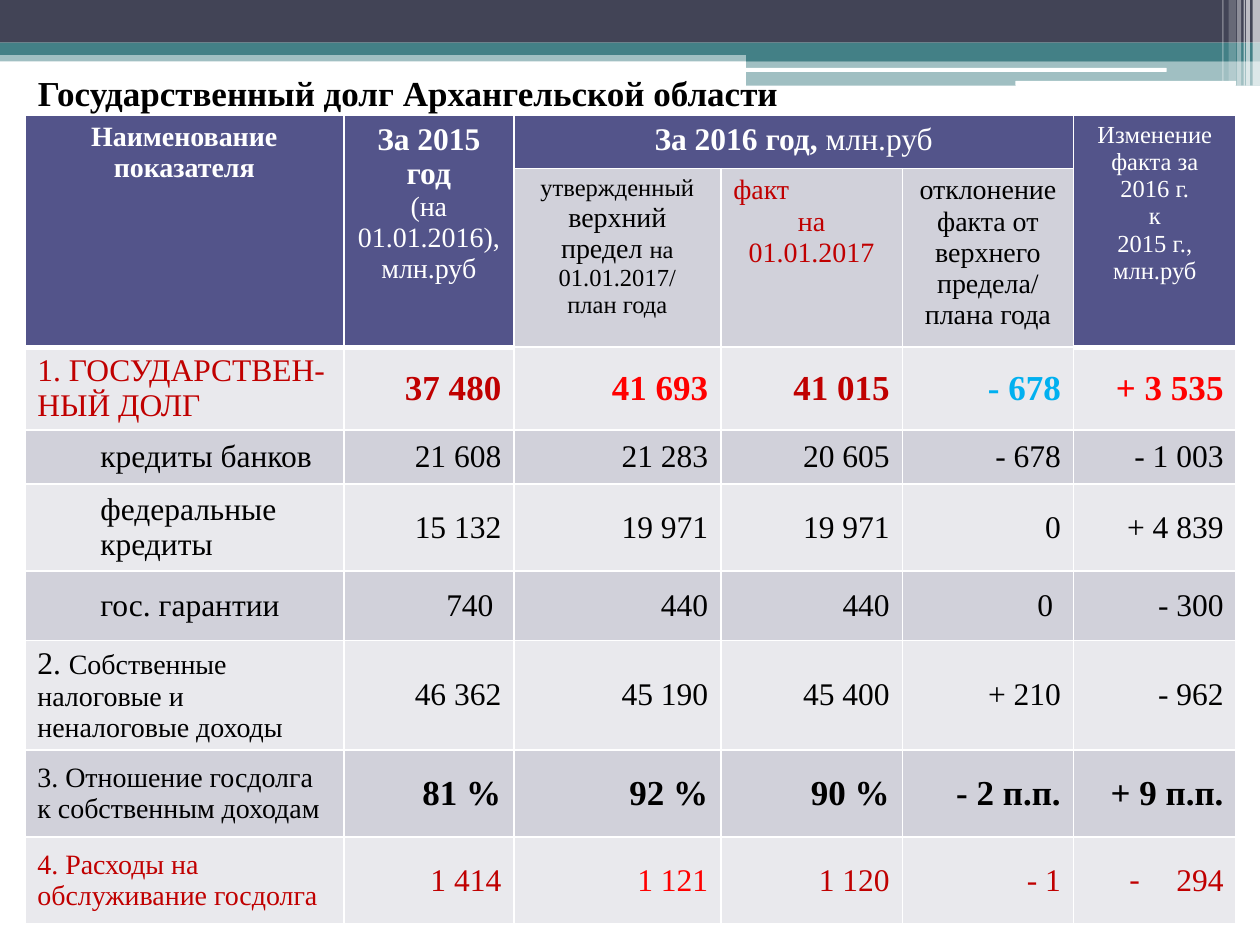
from lxml.etree import SubElement
from pptx import Presentation
from pptx.dml.color import RGBColor
from pptx.enum.shapes import MSO_SHAPE
from pptx.enum.text import MSO_ANCHOR, MSO_AUTO_SIZE, PP_ALIGN
from pptx.oxml import parse_xml
from pptx.oxml.ns import nsdecls, qn
from pptx.util import Cm, Pt

COLORS = {"white": "FFFFFF", "black": "000000", "slate": "424456", "teal": "438086",
          "indigo": "53548A", "light": "E9E9ED", "grey": "D1D1DA",
          "dark_red": "C00000", "red": "FF0000", "blue": "00B0F0"}

BANDS = [(0, 1.02, 25.4, 0.22, "teal", 50), (0, 0, 25.4, 0.86, "slate", 100),
         (0, 0.86, 25.4, 0.25, "teal", 100), (15.04, 0.99, 10.36, 0.25, "teal", 100),
         (15.04, 1.22, 10.36, 0.51, "teal", 50)]
HIGHLIGHTS = [(15.01, 1.37, 8.51, 0.08), (20.47, 1.63, 4.45, 0.1)]
STRIPES = [(25.25, 0.15, 1.73, 65), (25.12, 0.08, 1.73, 65), (25.07, 0.03, 1.73, 60),
           (24.94, 0.08, 1.73, 40), (24.77, 0.15, 1.63, 20), (24.64, 0.03, 1.63, 30)]

WIDTHS = [6.43, 3.43, 4.17, 3.66, 3.45, 3.28]
HEIGHTS = [1.07, 3.6, 1.67, 1.09, 1.75, 1.4, 2.21, 1.75, 1.75]

CENTER, LEFT, RIGHT = PP_ALIGN.CENTER, PP_ALIGN.LEFT, PP_ALIGN.RIGHT
HEADERS = {
    (0, 0): [[("Наименование показателя", 16, "white", True)]],
    (0, 1): [[("За 2015 год", 18, "white", True)],
             [("(на 01.01.2016), млн.руб", 16, "white", False)]],
    (0, 2): [[("За 2016 год, ", 18, "white", True), ("млн.руб", 18, "white", False)]],
    (0, 5): [[(line, 14, "white", False)]
             for line in ("Изменение факта за 2016 г.", "к", "2015 г.,", "млн.руб")],
    (1, 2): [[("утвержденный ", 14, "black", False),
              ("верхний предел ", 16, "black", False),
              ("на 01.01.2017/", 14, "black", False)],
             [("план года", 14, "black", False)]],
    (1, 3): [[("факт", 16, "dark_red", False)], [("на 01.01.2017", 16, "dark_red", False)]],
    (1, 4): [[("отклонение факта от верхнего предела/ плана года", 16, "black", False)]],
}
MERGES = [((0, 0), (1, 0)), ((0, 1), (1, 1)), ((0, 2), (0, 4)), ((0, 5), (1, 5))]

BLACK = ["black"] * 5
INDICATORS = [
    ([("1. ГОСУДАРСТВЕН-НЫЙ ДОЛГ", 18, "dark_red", False)], 0,
     ["37 480", "41 693", "41 015", "- 678", "+ 3 535"], 20, True,
     ["dark_red", "red", "dark_red", "blue", "red"]),
    ([("кредиты банков", 18, "black", False)], 1,
     ["21 608", "21 283", "20 605", "- 678", "- 1 003"], 18, False, BLACK),
    ([("федеральные кредиты", 18, "black", False)], 1,
     ["15 132", "19 971", "19 971", "0", "+ 4 839"], 18, False, BLACK),
    ([("гос. гарантии", 18, "black", False)], 1,
     ["740 ", "440", "440", "0 ", "- 300"], 18, False, BLACK),
    ([("2. ", 18, "black", False),
      ("Собственные налоговые и неналоговые доходы", 16, "black", False)], 0,
     ["46 362", "45 190", "45 400", "+ 210", "- 962"], 18, False, BLACK),
    ([("3. Отношение госдолга к собственным доходам", 16, "black", False)], 0,
     ["81 %", "92 %", "90 %", "- 2 п.п.", "+ 9 п.п."], 20, True, BLACK),
    ([("4. Расходы на обслуживание госдолга", 16, "dark_red", False)], 0,
     ["1 414", "1 121", "1 120", "- 1", " 294"], 18, False,
     ["dark_red", "red", "dark_red", "dark_red", "dark_red"]),
]


class DebtSlide:
    """Holds the style and the slide, and draws each kind of element."""

    font = "Times New Roman"

    def __init__(self, slide):
        self.slide = slide

    def color(self, name):
        return RGBColor.from_string(COLORS[name])

    def style(self, run, size, color, bold):
        run.font.name, run.font.size, run.font.bold = self.font, Pt(size), bold
        run.font.color.rgb = self.color(color)

    def block(self, left, top, width, height, color, opacity=100, kind=MSO_SHAPE.RECTANGLE):
        block = self.slide.shapes.add_shape(kind, Cm(left), Cm(top), Cm(width), Cm(height))
        block.shadow.inherit = False
        block.fill.solid()
        block.fill.fore_color.rgb = self.color(color)
        block.line.fill.background()
        if opacity < 100:
            tint = block.fill._xPr.find(qn("a:solidFill"))[0]
            SubElement(tint, qn("a:alpha")).set("val", str(opacity * 1000))

    def title(self, text, left, top, width, height):
        heading = self.slide.shapes.title
        heading.left, heading.top = Cm(left), Cm(top)
        heading.width, heading.height = Cm(width), Cm(height)
        frame = heading.text_frame
        frame.text = text
        frame.auto_size = MSO_AUTO_SIZE.NONE
        frame.vertical_anchor = MSO_ANCHOR.MIDDLE
        frame.paragraphs[0].alignment = LEFT
        self.style(frame.paragraphs[0].runs[0], 20, "black", True)
        self.slide.shapes._spTree.append(heading._element)

    def table(self, left, top, widths, heights):
        frame = self.slide.shapes.add_table(len(heights), len(widths), Cm(left), Cm(top),
                                            Cm(sum(widths)), Cm(sum(heights)))
        for column, width in zip(frame.table.columns, widths):
            column.width = Cm(width)
        for row, height in zip(frame.table.rows, heights):
            row.height = Cm(height)
        return frame.table

    def cell(self, cell, fill, bottom=1):
        cell.fill.solid()
        cell.fill.fore_color.rgb = self.color(fill)
        properties = cell._tc.get_or_add_tcPr()
        for place, (side, width) in enumerate(zip("LRTB", (1, 1, 1, bottom))):
            properties.insert(place, parse_xml(
                f'<a:ln{side} {nsdecls("a")} w="{Pt(width)}"><a:solidFill>'
                f'<a:srgbClr val="{COLORS["white"]}"/></a:solidFill></a:ln{side}>'))

    def label(self, cell, paragraphs, align, anchor=MSO_ANCHOR.MIDDLE, level=0):
        cell.vertical_anchor = anchor
        frame = cell.text_frame
        frame.text = "\n".join("" for _ in paragraphs)
        for paragraph, pieces in zip(frame.paragraphs, paragraphs):
            paragraph.alignment = align
            if level:
                paragraph.level = level
                paragraph._p.get_or_add_pPr().set("marL", str(Cm(1.27)))
            for text, *look in pieces:
                run = paragraph.add_run()
                run.text = text
                self.style(run, *look)

    def dash(self, cell):
        properties = cell.text_frame.paragraphs[0]._p.get_or_add_pPr()
        properties.set("marL", str(Cm(0.79)))
        properties.set("indent", str(-Cm(0.79)))
        SubElement(properties, qn("a:buFont")).set("typeface", self.font)
        SubElement(properties, qn("a:buChar")).set("char", "-")


def main():
    presentation = Presentation()
    presentation.slide_width, presentation.slide_height = Cm(25.4), Cm(19.05)
    debt = DebtSlide(presentation.slides.add_slide(presentation.slide_layouts[5]))

    for band in BANDS:
        debt.block(*band)
    for highlight in HIGHLIGHTS:
        debt.block(*highlight, "white", kind=MSO_SHAPE.ROUNDED_RECTANGLE)
    for left, width, height, opacity in STRIPES:
        debt.block(left, 0, width, height, "white", opacity)
    debt.title("Государственный долг Архангельской области", 0.51, 1.32, 23.19, 1.07)

    table = debt.table(0.5, 2.33, WIDTHS, HEIGHTS)
    for row in range(len(HEIGHTS)):
        for column in range(len(WIDTHS)):
            subheader = row == 1 and 2 <= column <= 4
            banded = "light" if row % 2 == 0 else "grey"
            tall = row < 2 and column in (0, 1, 5)
            fill = "indigo" if row < 2 and not subheader else banded
            debt.cell(table.cell(row, column), fill, 3 if tall else 1)
    for first, last in MERGES:
        table.cell(*first).merge(table.cell(*last))

    for place, paragraphs in HEADERS.items():
        debt.label(table.cell(*place), paragraphs, CENTER, MSO_ANCHOR.TOP)
    table.cell(1, 3).text_frame.paragraphs[0].alignment = LEFT
    for row, (name, level, values, size, bold, colors) in enumerate(INDICATORS, 2):
        debt.label(table.cell(row, 0), [name], LEFT, level=level)
        for column, (value, color) in enumerate(zip(values, colors), 1):
            debt.label(table.cell(row, column), [[(value, size, color, bold)]], RIGHT)
    debt.dash(table.cell(8, 5))

    presentation.save("out.pptx")


if __name__ == "__main__":
    main()
